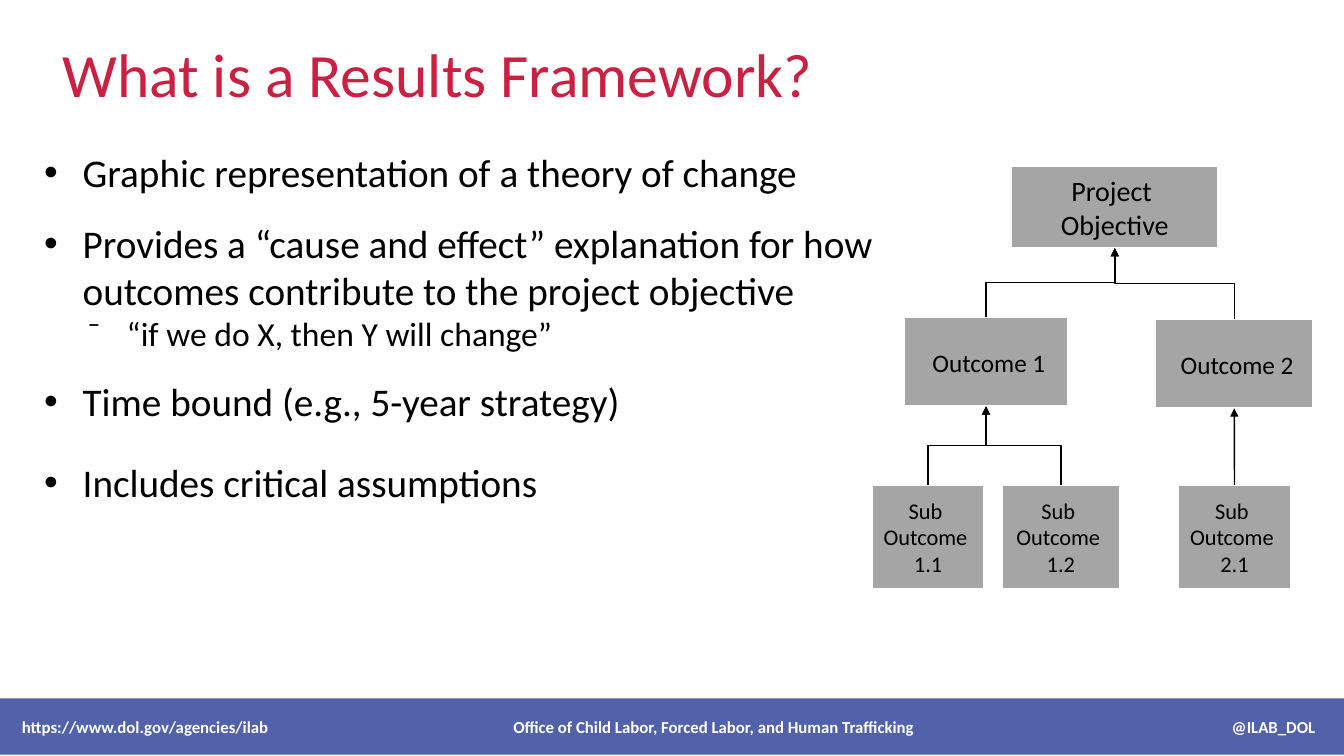
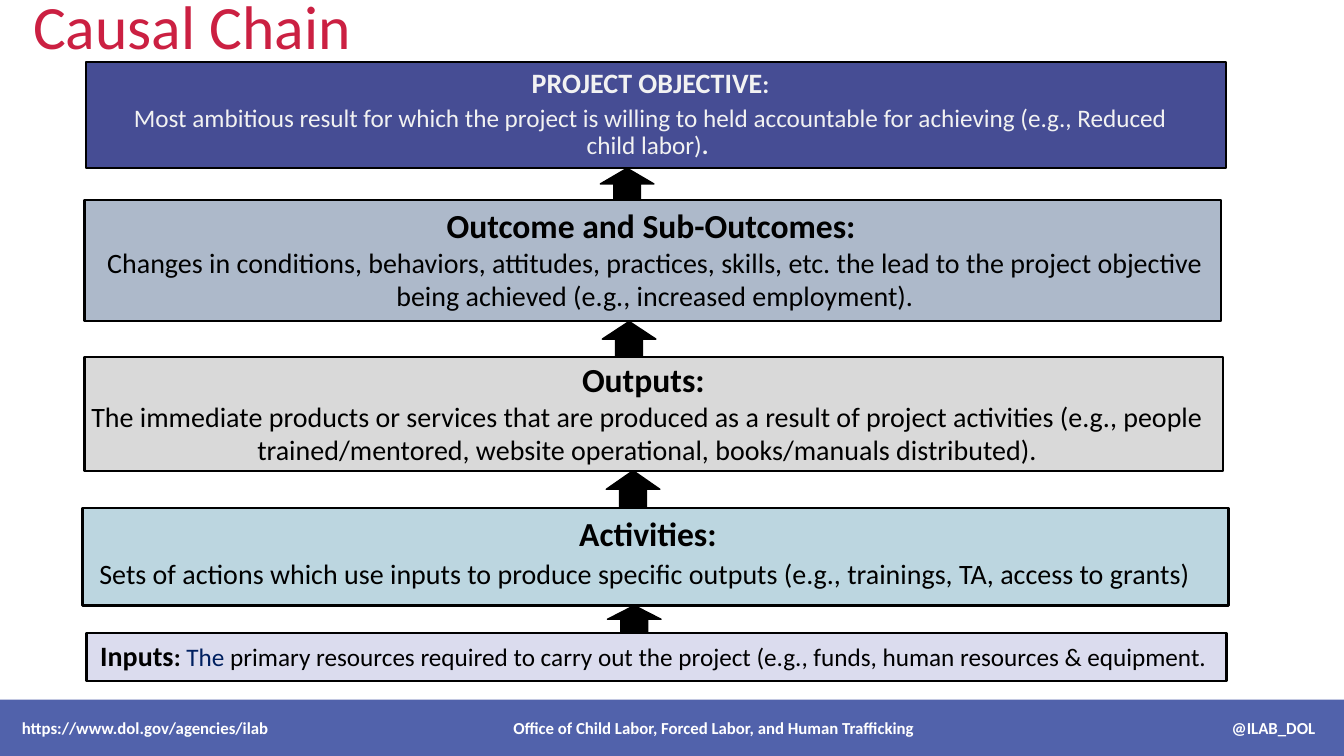
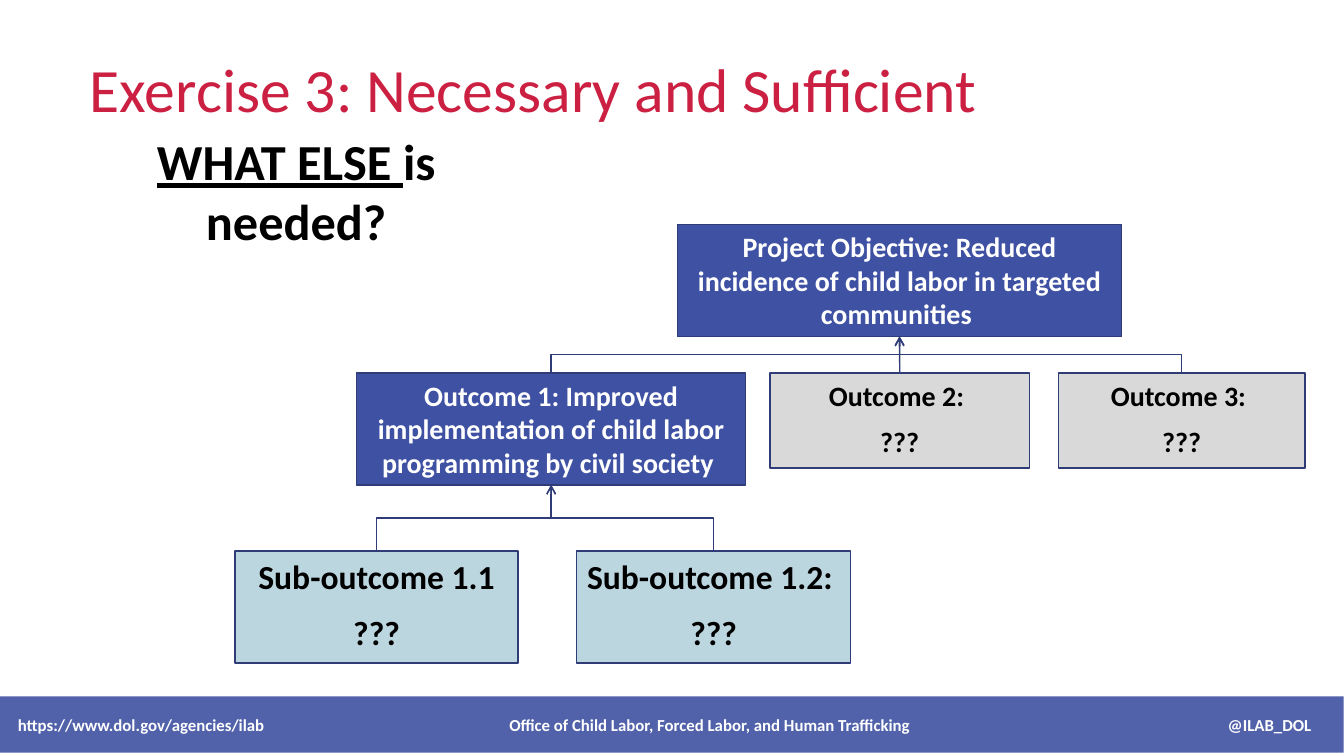
from itertools import pairwise

from lxml import etree
from pptx import Presentation
from pptx.dml.color import RGBColor
from pptx.enum.shapes import MSO_CONNECTOR, MSO_SHAPE
from pptx.enum.text import MSO_ANCHOR, MSO_AUTO_SIZE, PP_ALIGN
from pptx.oxml.ns import qn
from pptx.util import Cm, Pt

RED = RGBColor(0xCB, 0x20, 0x42)
BLUE = RGBColor(0x3F, 0x51, 0xA2)
DARK_BLUE = RGBColor(0x2F, 0x3C, 0x78)
INDIGO = RGBColor(0x46, 0x4D, 0x94)
NAVY = RGBColor(0x00, 0x20, 0x60)
SLATE = RGBColor(0xAD, 0xB9, 0xCA)
TEAL = RGBColor(0xBC, 0xD6, 0xE0)
LAVENDER = RGBColor(0xDB, 0xDC, 0xEE)
GRAY = RGBColor(0xA5, 0xA5, 0xA5)
LIGHT_GRAY = RGBColor(0xD9, 0xD9, 0xD9)
OFF_WHITE = RGBColor(0xF2, 0xF2, 0xF2)
WHITE = RGBColor(0xFF, 0xFF, 0xFF)
BLACK = RGBColor(0, 0, 0)

FONT = "Calibri"
TITLE_ONLY, TITLE_AND_BODY = 5, 1
FOOTER = ("https://www.dol.gov/agencies/ilab\t"
          "Office of Child Labor, Forced Labor, and Human Trafficking\t@ILAB_DOL")


class Deck:
    """Holds the shared style and the slide being built; lengths are in cm."""

    def __init__(self):
        self.prs = Presentation()
        self.prs.slide_width, self.prs.slide_height = Cm(33.87), Cm(19.05)
        self.slide = None

    def new_slide(self, layout=TITLE_ONLY):
        self.slide = self.prs.slides.add_slide(self.prs.slide_layouts[layout])

    def place(self, sp, at):
        sp.left, sp.top, sp.width, sp.height = map(Cm, at)

    def run(self, p, text, size, color=BLACK, bold=False, underline=False):
        r = p.add_run()
        r.text = text
        f = r.font
        f.name, f.size, f.bold, f.underline = FONT, Pt(size), bold, underline
        f.color.rgb = color

    def fill_text(self, tf, paragraphs, align=PP_ALIGN.CENTER, gap=0, spacing=1.0):
        """Fill a frame; each paragraph is a list of run tuples, gap lies between."""
        for i, runs in enumerate(paragraphs):
            p = tf.add_paragraph() if i else tf.paragraphs[0]
            p.alignment, p.line_spacing = align, spacing
            p.space_before, p.space_after = Pt(gap if i else 0), Pt(0)
            for run in runs:
                self.run(p, *run)

    def title(self, text, at, spacing=1.0):
        sp = self.slide.shapes.title
        self.place(sp, at)
        tf = sp.text_frame
        tf.auto_size, tf.vertical_anchor = MSO_AUTO_SIZE.NONE, MSO_ANCHOR.MIDDLE
        self.fill_text(tf, [[(text, 44, RED)]], PP_ALIGN.LEFT, spacing=spacing)

    def bullets(self, items, at):
        """Items are (text, level, space before in points)."""
        sp = self.slide.placeholders[1]
        self.place(sp, at)
        tf = sp.text_frame
        tf.auto_size = MSO_AUTO_SIZE.NONE
        styles = [(28, 0.97, "•"), (24, 2.08, "⁻")]
        self.fill_text(tf, [[(text, styles[level][0])] for text, level, _ in items],
                       PP_ALIGN.LEFT)
        for p, (_, level, before) in zip(tf.paragraphs, items):
            _, indent, mark = styles[level]
            p.level, p.space_before = level, Pt(before)
            pPr = p._p.get_or_add_pPr()
            pPr.set("marL", str(Cm(indent)))
            pPr.set("indent", str(-Cm(0.97)))
            etree.SubElement(pPr, qn("a:buFont")).set("typeface", "Arial")
            etree.SubElement(pPr, qn("a:buChar")).set("char", mark)

    def shape(self, kind, at, fill, line=None, width=1.0):
        sp = self.slide.shapes.add_shape(kind, *map(Cm, at))
        sp.shadow.inherit = False
        sp.fill.solid()
        sp.fill.fore_color.rgb = fill
        if line is None:
            sp.line.fill.background()
        else:
            sp.line.color.rgb, sp.line.width = line, Pt(width)
        return sp

    def box(self, at, fill, line, width, paragraphs, anchor=MSO_ANCHOR.MIDDLE,
            wrap=True, insets=(0.25, 0.13, 0.25), gap=0, spacing=1.0):
        """Rectangle with centred text; insets are left, top, right."""
        sp = self.shape(MSO_SHAPE.RECTANGLE, at, fill, line, width)
        tf = sp.text_frame
        tf.word_wrap, tf.vertical_anchor = wrap, anchor
        tf.margin_left, tf.margin_top, tf.margin_right = map(Cm, insets)
        self.fill_text(tf, paragraphs, gap=gap, spacing=spacing)
        return sp

    def text(self, at, paragraphs):
        tf = self.slide.shapes.add_textbox(*map(Cm, at)).text_frame
        tf.word_wrap = True
        self.fill_text(tf, paragraphs)

    def link(self, child, parent, color, head):
        """Arrow from the top of child to the bottom of parent, bent halfway."""
        x1, y1 = child.left + child.width // 2, child.top
        x2, y2 = parent.left + parent.width // 2, parent.top + parent.height
        bent = abs(x2 - x1) > Cm(0.05)
        kind = MSO_CONNECTOR.ELBOW if bent else MSO_CONNECTOR.STRAIGHT
        cn = self.slide.shapes.add_connector(kind, x1, y1, x2, y2)
        cn.begin_connect(child, 0)
        cn.end_connect(parent, 2)
        if bent:
            # An elbow leaves sideways, so it is laid flat and turned upwards.
            mid_x, mid_y = (x1 + x2) // 2, (y1 + y2) // 2
            half_rise, half_run = (y1 - y2) // 2, (x2 - x1) // 2
            cn.begin_x, cn.begin_y = mid_x - half_rise, mid_y - half_run
            cn.end_x, cn.end_y = mid_x + half_rise, mid_y + half_run
            cn._element.spPr.find(qn("a:xfrm")).set("rot", "16200000")
        cn.line.color.rgb, cn.line.width = color, Pt(1)
        etree.SubElement(cn.line._get_or_add_ln(), qn("a:tailEnd")).set("type", head)
        etree.SubElement(cn._element.spPr, qn("a:effectLst"))

    def footer(self, left, top):
        sp = self.shape(MSO_SHAPE.RECTANGLE, (left, top, 33.96, 1.42), BLUE)
        color = sp._element.spPr.find(qn("a:solidFill")).find(qn("a:srgbClr"))
        etree.SubElement(color, qn("a:alpha")).set("val", "90000")
        tf = sp.text_frame
        tf.word_wrap, tf.vertical_anchor = True, MSO_ANCHOR.MIDDLE
        tf.margin_left = Cm(0.55)
        self.fill_text(tf, [[(FOOTER, 12, WHITE, True)]], PP_ALIGN.LEFT)
        tabs = etree.SubElement(tf.paragraphs[0]._p.get_or_add_pPr(), qn("a:tabLst"))
        for pos, align in ((17.44, "ctr"), (32.6, "r")):
            tab = etree.SubElement(tabs, qn("a:tab"))
            tab.set("pos", str(Cm(pos)))
            tab.set("algn", align)


def results_framework(deck):
    deck.new_slide(TITLE_AND_BODY)
    deck.title("What is a Results Framework?", (1.32, 0.76, 25.07, 2.13))
    deck.bullets([
        ("Graphic representation of a theory of change", 0, 0),
        ("Provides a “cause and effect” explanation for how outcomes contribute "
         "to the project objective", 0, 17),
        ("“if we do X, then Y will change”", 1, 0),
        ("Time bound (e.g., 5-year strategy)", 0, 17),
        ("Includes critical assumptions", 0, 24),
    ], (0.86, 3.61, 22.02, 8.86))

    def node(at, size, *lines, parent=None):
        sp = deck.box(at, GRAY, WHITE, 1.5, [[(line, size)] for line in lines],
                      wrap=False)
        if parent is not None:
            deck.link(sp, parent, BLACK, "triangle")
        return sp

    objective = node((25.48, 4.19, 5.23, 2.06), 20, "Project ", "Objective")
    outcome1 = node((22.78, 8, 4.14, 2.24), 18, " Outcome 1", parent=objective)
    outcome2 = node((29.11, 8.05, 3.99, 2.24), 18, " Outcome 2", parent=objective)
    for left, width, number, parent in ((21.97, 2.84, "1.1", outcome1),
                                        (25.25, 2.97, "1.2", outcome1),
                                        (29.69, 2.84, "2.1", outcome2)):
        node((left, 12.22, width, 2.62), 16, "Sub ", "Outcome ", number,
             parent=parent)
    deck.footer(0, 17.6)


def causal_chain(deck):
    deck.new_slide()
    deck.title("Causal Chain", (0.58, 0, 29.64, 1.5), spacing=0.9)
    top = MSO_ANCHOR.TOP
    steps = [
        deck.box((2.16, 1.57, 28.73, 2.67), INDIGO, BLACK, 1.5, [
            [("PROJECT OBJECTIVE", 20, OFF_WHITE, True), (":", 18, OFF_WHITE, True)],
            [("Most ambitious result for which the project is willing to held "
              "accountable for achieving (e.g., Reduced child labor)", 18, OFF_WHITE),
             (". ", 18, OFF_WHITE, True)],
        ], top, insets=(0.71, 0.18, 0.97), gap=4.5, spacing=0.9),
        deck.box((2.13, 5.03, 28.65, 3.07), SLATE, BLACK, 1.5, [
            [("Outcome and Sub-Outcomes: ", 24, BLACK, True)],
            [("Changes in conditions, behaviors, attitudes, practices, skills, etc. "
              "the lead to the project objective being achieved (e.g., increased "
              "employment).", 20)],
        ], top, insets=(0.1, 0.13, 0)),
        deck.box((2.13, 8.99, 28.7, 2.87), LIGHT_GRAY, BLACK, 1.5, [
            [("Outputs: ", 24, BLACK, True)],
            [("The immediate products or services that are produced as a result of "
              "project activities (e.g., people trained/mentored, website "
              "operational, books/manuals distributed).", 20)],
        ], top, insets=(0.16, 0.05, 0.5)),
        deck.box((2.08, 12.8, 28.88, 2.46), TEAL, BLACK, 1.5, [
            [("Activities:", 24, BLACK, True)],
            [("Sets of actions which use inputs to produce specific outputs (e.g., "
              "trainings, TA, access to grants) ", 20)],
        ], top, insets=(0.08, 0.23, 0.46), gap=5, spacing=0.9),
        deck.box((2.18, 15.95, 28.73, 1.22), LAVENDER, BLACK, 1.5, [
            [("Inputs", 20, BLACK, True), (": ", 18, BLACK, True), ("The ", 18, NAVY),
             ("primary resources required to carry out the project (e.g., funds, "
              "human resources & equipment. ", 18)],
        ], wrap=False, spacing=0.9),
    ]
    for (upper, lower), center in zip(pairwise(steps), (15.8, 15.85, 15.95, 15.98)):
        bottom = upper.top.cm + upper.height.cm
        deck.shape(MSO_SHAPE.UP_ARROW,
                   (center - 0.67, bottom, 1.35, lower.top.cm - bottom), BLACK, BLACK)
    deck.footer(0, 17.63)


def necessary_and_sufficient(deck):
    deck.new_slide()
    deck.title("Exercise 3: Necessary and Sufficient", (2.01, 1.42, 26.26, 1.57))
    deck.text((2.18, 3.15, 10.57, 3.33),
              [[("WHAT ELSE ", 36, BLACK, True, True), ("is needed?", 36, BLACK, True)]])

    def node(at, fill, size, *lines, color=BLACK, parent=None):
        sp = deck.box(at, fill, DARK_BLUE, 1,
                      [[(line, size, color, True)] for line in lines],
                      MSO_ANCHOR.TOP, gap=0.45 * size)
        if parent is not None:
            deck.link(sp, parent, DARK_BLUE, "arrow")
        return sp

    objective = node((17.07, 5.66, 11.2, 2.82), BLUE, 20,
                     "Project Objective: Reduced incidence of child labor in "
                     "targeted communities ", color=WHITE)
    outcome1 = node((8.99, 9.4, 9.8, 2.82), BLUE, 20,
                    "Outcome 1: Improved implementation of child labor programming "
                    "by civil society ", color=WHITE, parent=objective)
    for left, width, label in ((19.41, 6.53, "Outcome 2: "),
                               (26.67, 6.22, "Outcome 3: ")):
        node((left, 9.4, width, 2.39), LIGHT_GRAY, 20, label, "???", parent=objective)
    for left, width, label in ((5.92, 7.14, "Sub-outcome 1.1"),
                               (14.53, 6.91, "Sub-outcome 1.2: ")):
        node((left, 13.89, width, 2.82), TEAL, 24, label, "???", parent=outcome1)
    deck.footer(-0.1, 17.55)


def main():
    deck = Deck()
    results_framework(deck)
    causal_chain(deck)
    necessary_and_sufficient(deck)
    deck.prs.save("out.pptx")


if __name__ == "__main__":
    main()
